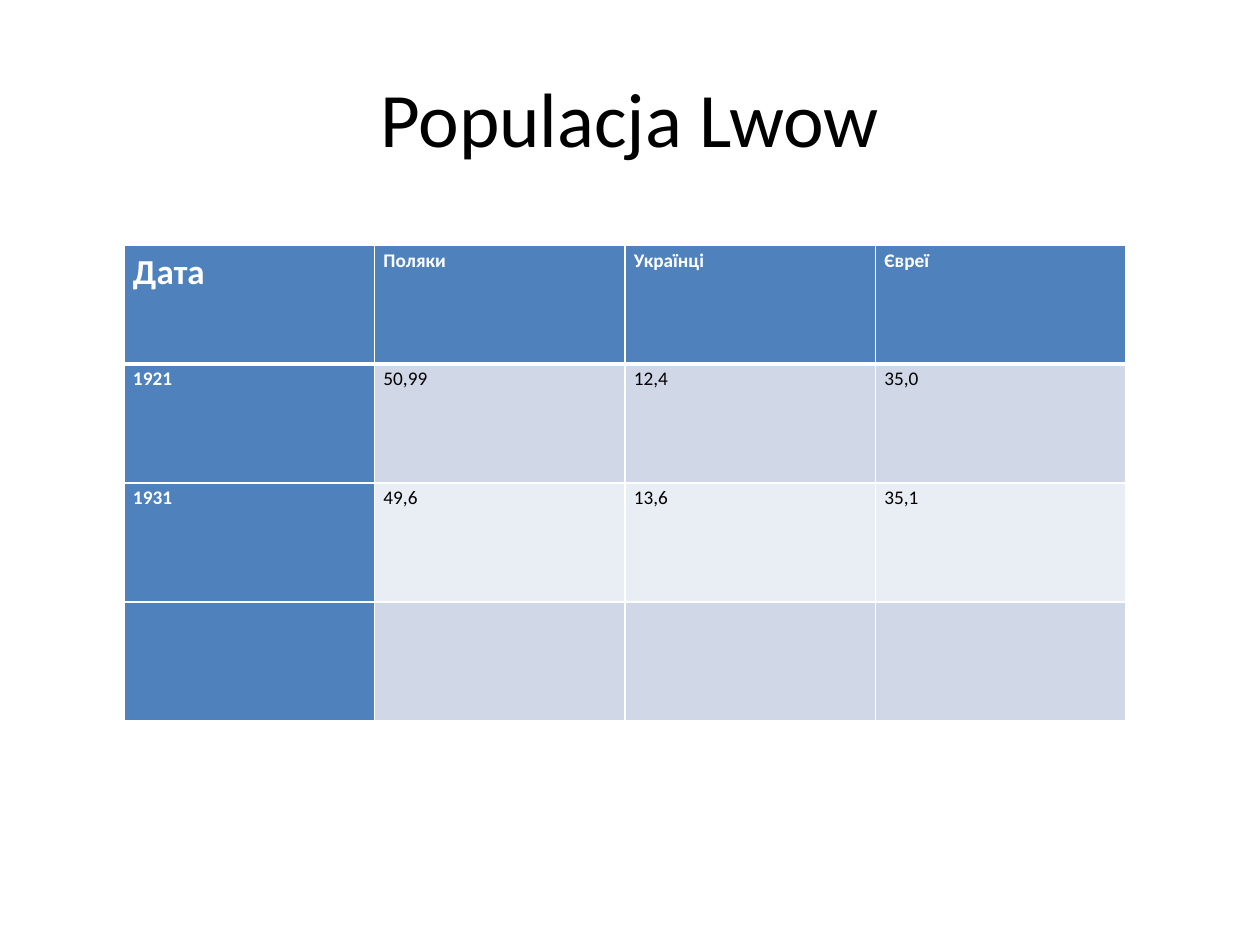
from dataclasses import dataclass

from lxml.etree import SubElement
from pptx import Presentation
from pptx.dml.color import RGBColor
from pptx.enum.text import MSO_ANCHOR, PP_ALIGN
from pptx.oxml.ns import qn
from pptx.util import Emu, Pt

PX_PER_INCH = 126


@dataclass(frozen=True)
class Theme:
    font: str = "Calibri"
    black: str = "000000"
    white: str = "FFFFFF"
    accent: str = "4F81BD"
    bands: tuple[str, str] = ("D0D8E8", "E9EDF4")
    title_size: int = 44
    corner_size: int = 20
    cell_size: int = 11
    line: int = 1
    header_line: int = 3
    line_spacing: float = 1.15


@dataclass(frozen=True)
class Box:
    left: int
    top: int
    width: int
    height: int


@dataclass(frozen=True)
class CellStyle:
    fill: str
    color: str
    size: int
    bold: bool
    top_line: int
    bottom_line: int


THEME = Theme()
TITLE_BOX = Box(63, 38, 1134, 158)
TABLE_BOX = Box(124, 245, 1002, 476)
CELL_MARGIN = 9
POPULATION = [
    ("Дата", "Поляки", "Українці", "Євреї"),
    ("1921", "50,99", "12,4", "35,0"),
    ("1931", "49,6", "13,6", "35,1"),
    ("", "", "", ""),
]


def px(n: int) -> Emu:
    return Emu(round(n * 914400 / PX_PER_INCH))


def place(box: Box) -> tuple[Emu, Emu, Emu, Emu]:
    return px(box.left), px(box.top), px(box.width), px(box.height)


def format_font(font, size: int, color: str, bold: bool = False) -> None:
    font.name = THEME.font
    font.size = Pt(size)
    font.bold = bold
    font.color.rgb = RGBColor.from_string(color)


def add_title(s, text: str) -> None:
    tf = s.shapes.add_textbox(*place(TITLE_BOX)).text_frame
    tf.word_wrap = True
    tf.vertical_anchor = MSO_ANCHOR.MIDDLE
    tf.text = text
    p = tf.paragraphs[0]
    p.alignment = PP_ALIGN.CENTER
    format_font(p.runs[0].font, THEME.title_size, THEME.black)


def cell_style(row: int, col: int) -> CellStyle:
    """Header row and first column are accented; the other rows are banded."""
    heading = row == 0 or col == 0
    return CellStyle(
        fill=THEME.accent if heading else THEME.bands[(row - 1) % 2],
        color=THEME.white if heading else THEME.black,
        size=THEME.corner_size if row == col == 0 else THEME.cell_size,
        bold=heading,
        top_line=THEME.header_line if row == 1 else THEME.line,
        bottom_line=THEME.header_line if row == 0 else THEME.line,
    )


def add_borders(cell, style: CellStyle) -> None:
    tc_pr = cell._tc.get_or_add_tcPr()
    widths = {"L": THEME.line, "R": THEME.line,
              "T": style.top_line, "B": style.bottom_line}
    for side, width in widths.items():
        ln = SubElement(tc_pr, qn(f"a:ln{side}"), w=str(Pt(width)))
        SubElement(SubElement(ln, qn("a:solidFill")), qn("a:srgbClr"), val=THEME.white)


def fill_cell(cell, text: str, style: CellStyle) -> None:
    add_borders(cell, style)
    cell.fill.solid()
    cell.fill.fore_color.rgb = RGBColor.from_string(style.fill)
    cell.margin_left = cell.margin_right = px(CELL_MARGIN)
    cell.margin_top = cell.margin_bottom = 0
    if text:
        cell.text_frame.text = text
        p = cell.text_frame.paragraphs[0]
        p.line_spacing = THEME.line_spacing
        format_font(p.runs[0].font, style.size, style.color, style.bold)


def add_population_table(s, rows: list[tuple[str, ...]]) -> None:
    table = s.shapes.add_table(len(rows), len(rows[0]), *place(TABLE_BOX)).table
    for i, row in enumerate(rows):
        for j, text in enumerate(row):
            fill_cell(table.cell(i, j), text, cell_style(i, j))


def main() -> None:
    prs = Presentation()
    prs.slide_width, prs.slide_height = px(1260), px(945)
    s = prs.slides.add_slide(prs.slide_layouts[6])
    add_title(s, "Populacja Lwow")
    add_population_table(s, POPULATION)
    prs.save("out.pptx")


if __name__ == "__main__":
    main()
